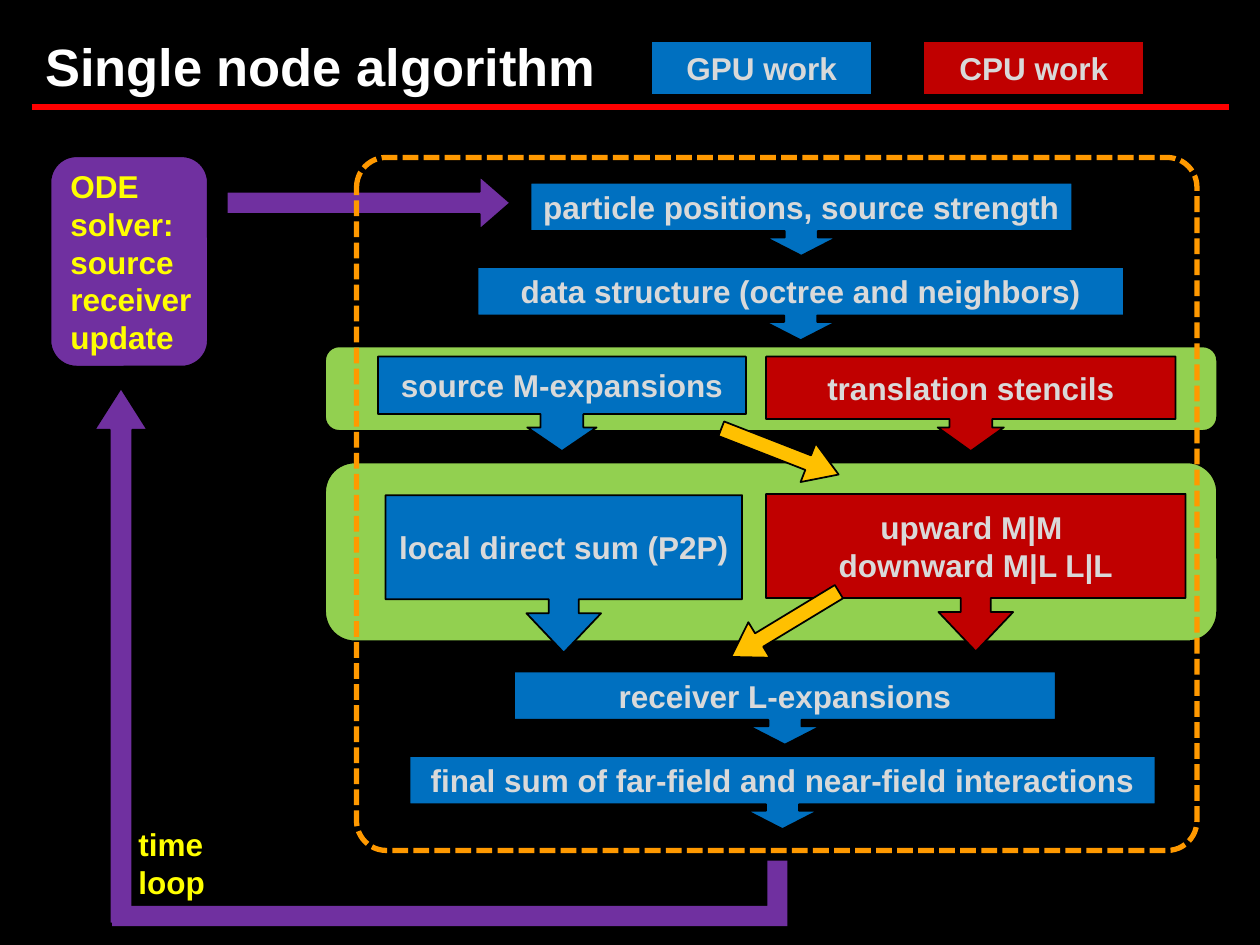
from dataclasses import dataclass
from typing import Optional

import pptx
import pptx.dml.color
import pptx.enum.dml
import pptx.enum.shapes
import pptx.enum.text
import pptx.oxml
import pptx.util

Inches = pptx.util.Inches
Kind = pptx.enum.shapes.MSO_SHAPE
Align = pptx.enum.text.PP_ALIGN
Anchor = pptx.enum.text.MSO_ANCHOR

COLORS = {
    "black": "000000",
    "white": "FFFFFF",
    "red": "FF0000",
    "gpu": "0070C0",
    "cpu": "C00000",
    "stage": "92D050",
    "loop": "7030A0",
    "frame": "FF9900",
    "transfer": "FFC000",
    "label": "D9D9D9",
    "yellow": "FFFF00",
}
THIN_CALLOUT = (0.452, 0.488, 0.25, 0.661)
SOURCE_CALLOUT = (0.452, 0.367, 0.25, 0.609)
STENCIL_CALLOUT = (0.452, 0.35, 0.25, 0.661)
TALL_CALLOUT = (0.191, 0.237, 0.25, 0.661)
TRANSFER_ARROW = (0.376, 0.787)


@dataclass(frozen=True)
class Block:
    kind: Kind
    left: float
    top: float
    width: float
    height: float
    fill: Optional[str]
    text: str = ""
    adjustments: tuple[float, ...] = ()
    rotation: float = 0
    line: Optional[str] = "black"
    line_width: float = 1
    dashed: bool = False
    text_color: str = "label"
    align: Align = Align.CENTER


def step(left: float, top: float, width: float, height: float, worker: str, text: str,
         adjustments: tuple[float, ...] = THIN_CALLOUT) -> Block:
    return Block(Kind.DOWN_ARROW_CALLOUT, left, top, width, height, worker, text, adjustments)


BLOCKS = [
    Block(Kind.ROUNDED_RECTANGLE, 2.58, 2.75, 7.08, 0.67, "stage"),
    Block(Kind.ROUNDED_RECTANGLE, 2.58, 3.67, 7.08, 1.42, "stage"),
    step(4.21, 1.45, 4.3, 0.58, "gpu", "particle positions, source strength"),
    Block(Kind.RECTANGLE, 5.17, 0.33, 1.75, 0.42, "gpu", "GPU work"),
    Block(Kind.RECTANGLE, 7.33, 0.33, 1.75, 0.42, "cpu", "CPU work"),
    Block(Kind.ROUNDED_RECTANGLE, 0.4, 1.24, 1.25, 1.67, "loop",
          "ODE\nsolver:\nsource\nreceiver\nupdate", text_color="yellow", align=Align.LEFT),
    Block(Kind.RIGHT_ARROW, 1.8, 1.4, 2.25, 0.42, "loop", adjustments=(0.422, 0.575)),
    Block(Kind.DOWN_ARROW, 0.75, 3.08, 0.42, 4.25, "loop", adjustments=(0.428, 0.787), rotation=180),
    Block(Kind.CORNER, 3.31, 4.41, 0.52, 5.36, "loop", adjustments=(0.307, 0.31),
          rotation=270, line=None),
    Block(Kind.ROUNDED_RECTANGLE, 2.83, 1.25, 6.67, 5.5, None, adjustments=(0.043,),
          line="frame", line_width=3, dashed=True),
    step(3.79, 2.12, 5.13, 0.58, "gpu", "data structure (octree and neighbors)"),
    step(3, 2.83, 2.92, 0.75, "gpu", "source M-expansions", SOURCE_CALLOUT),
    step(6.08, 2.83, 3.25, 0.75, "cpu", "translation stencils", STENCIL_CALLOUT),
    step(6.08, 3.92, 3.33, 1.25, "cpu", "upward M|M \ndownward M|L L|L", TALL_CALLOUT),
    step(3.06, 3.93, 2.83, 1.25, "gpu", "local direct sum (P2P)", TALL_CALLOUT),
    step(4.08, 5.33, 4.3, 0.58, "gpu", "receiver L-expansions"),
    step(3.25, 6, 5.92, 0.58, "gpu", "final sum of far-field and near-field interactions"),
    Block(Kind.RIGHT_ARROW, 5.69, 3.42, 1, 0.33, "transfer", adjustments=TRANSFER_ARROW, rotation=21.3),
    Block(Kind.RIGHT_ARROW, 5.73, 4.79, 1, 0.33, "transfer", adjustments=TRANSFER_ARROW, rotation=148.8),
]


def rgb(name: str) -> pptx.dml.color.RGBColor:
    return pptx.dml.color.RGBColor.from_string(COLORS[name])


def write_text(shape, text: str, *, color: str, size: float = 18, align: Align = Align.LEFT,
               anchor: Anchor = Anchor.MIDDLE, wrap: bool = False) -> None:
    frame = shape.text_frame
    frame.text = text
    frame.word_wrap = wrap
    frame.vertical_anchor = anchor
    for paragraph in frame.paragraphs:
        paragraph.alignment = align
        font = paragraph.runs[0].font
        font.name = "Arial"
        font.size = pptx.util.Pt(size)
        font.bold = True
        font.color.rgb = rgb(color)


def draw_block(slide, block: Block) -> None:
    shape = slide.shapes.add_shape(block.kind, Inches(block.left), Inches(block.top),
                                   Inches(block.width), Inches(block.height))
    shape.shadow.inherit = False
    shape.rotation = block.rotation
    for index, value in enumerate(block.adjustments):
        shape.adjustments[index] = value
    if block.fill:
        shape.fill.solid()
        shape.fill.fore_color.rgb = rgb(block.fill)
    else:
        shape.fill.background()
    if block.line:
        shape.line.color.rgb = rgb(block.line)
        shape.line.width = pptx.util.Pt(block.line_width)
    else:
        shape.line.fill.background()
    if block.dashed:
        shape.line.dash_style = pptx.enum.dml.MSO_LINE.SQUARE_DOT
    if block.text:
        write_text(shape, block.text, color=block.text_color, align=block.align)


def draw_title_rule(slide) -> None:
    rule = slide.shapes.add_connector(pptx.enum.shapes.MSO_CONNECTOR.STRAIGHT,
                                      Inches(0.25), Inches(0.85), Inches(9.75), Inches(0.85))
    rule.line.color.rgb = rgb("red")
    rule.line.width = pptx.util.Pt(3)
    effects = pptx.oxml.parse_xml(
        '<a:effectLst xmlns:a="http://schemas.openxmlformats.org/drawingml/2006/main"/>')
    rule._element.spPr.append(effects)


def main() -> None:
    presentation = pptx.Presentation()
    presentation.slide_width = Inches(10)
    presentation.slide_height = Inches(7.5)
    slide = presentation.slides.add_slide(presentation.slide_layouts[6])
    slide.background.fill.solid()
    slide.background.fill.fore_color.rgb = rgb("black")

    draw_title_rule(slide)
    for block in BLOCKS:
        draw_block(slide, block)

    title = slide.shapes.add_textbox(Inches(0.26), Inches(0.06), Inches(9.47), Inches(0.92))
    write_text(title, "Single node algorithm", color="white", size=30, wrap=True)
    loop_label = slide.shapes.add_textbox(Inches(1), Inches(6.5), Inches(0.75), Inches(0.71))
    write_text(loop_label, "time\nloop", color="yellow", anchor=Anchor.TOP, wrap=True)

    presentation.save("out.pptx")


if __name__ == "__main__":
    main()
